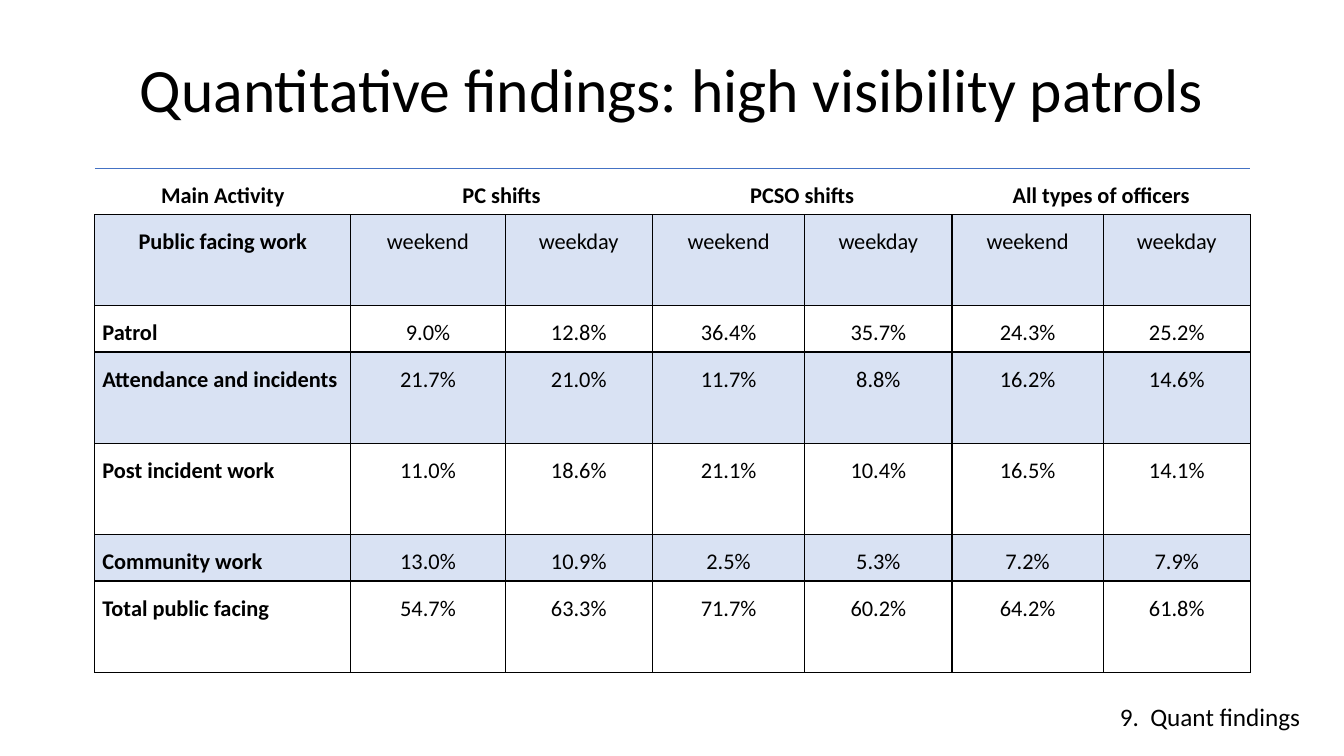
from dataclasses import dataclass
from typing import Any

from lxml import etree
from pptx import Presentation
from pptx import util as u
from pptx.dml import color
from pptx.enum import text
from pptx.oxml import ns

BLACK, BLUE = "000000", "4472C4"
MID, LEFT = text.PP_ALIGN.CENTER, text.PP_ALIGN.LEFT


@dataclass
class Label:
    words: str
    box: tuple[float, float, float, float]
    size: int
    align: Any
    frame: dict[str, Any]
    space: float = 1.0


LABELS = [
    Label("Quantitative findings: high visibility patrols",
          (2.39, 0.84, 29.11, 3.0), 44, MID,
          {"vertical_anchor": text.MSO_ANCHOR.MIDDLE,
           "margin_left": u.Cm(0.76), "margin_right": u.Cm(0.76),
           "margin_top": u.Cm(0.51), "margin_bottom": u.Cm(0.51)}, 0.9),
    Label("9.  Quant findings", (27.97, 17.55, 5.51, 1.02), 18, LEFT,
          {"auto_size": text.MSO_AUTO_SIZE.SHAPE_TO_FIT_TEXT}),
]

COLS = [6.45, 3.89, 3.71, 3.84, 3.71, 3.81, 3.71]
ROWS = [1.17, 2.29, 1.17, 2.31, 2.29, 1.17, 2.31]
HEADS = ["Main Activity", "PC shifts", "", "PCSO shifts", "",
         "All types of officers", ""]
DATA = [
    HEADS,
    ["Public facing work"] + ["weekend", "weekday"] * 3,
    ["Patrol", "9.0%", "12.8%", "36.4%", "35.7%", "24.3%", "25.2%"],
    ["Attendance and incidents",
     "21.7%", "21.0%", "11.7%", "8.8%", "16.2%", "14.6%"],
    ["Post incident work",
     "11.0%", "18.6%", "21.1%", "10.4%", "16.5%", "14.1%"],
    ["Community work", "13.0%", "10.9%", "2.5%", "5.3%", "7.2%", "7.9%"],
    ["Total public facing",
     "54.7%", "63.3%", "71.7%", "60.2%", "64.2%", "61.8%"],
]
CELL = {"margin_left": u.Cm(0.19), "margin_right": u.Cm(0.19),
        "margin_top": 0, "margin_bottom": 0,
        "vertical_anchor": text.MSO_ANCHOR.TOP}
HEAD_EDGES = {"L": None, "R": None, "T": BLUE, "B": BLACK}
BODY_EDGES = dict.fromkeys("LRTB", BLACK)


def rgb(code: str) -> color.RGBColor:
    return color.RGBColor.from_string(code)


def apply(item: Any, form: dict[str, Any]) -> None:
    for name, value in form.items():
        setattr(item, name, value)


def write(frame: Any, words: str, size: int, align: Any,
          space: float, bold: bool = False) -> None:
    par = frame.paragraphs[0]
    apply(par, {"alignment": align, "line_spacing": space})
    run = par.add_run()
    run.text = words
    apply(run.font, {"name": "Calibri", "size": u.Pt(size), "bold": bold})
    run.font.color.rgb = rgb(BLACK)


def add_label(slide: Any, label: Label) -> None:
    frame = slide.shapes.add_textbox(*map(u.Cm, label.box)).text_frame
    apply(frame, {"word_wrap": True, **label.frame})
    write(frame, label.words, label.size, label.align, label.space)


def tint(cell: Any, code: str, share: int) -> None:
    cell.fill.solid()
    cell.fill.fore_color.rgb = rgb(code)
    tone = cell._tc.tcPr.find(".//" + ns.qn("a:srgbClr"))
    etree.SubElement(tone, ns.qn("a:alpha"), val=str(share * 1000))


def edge(cell: Any, edges: dict[str, str | None]) -> None:
    props = cell._tc.get_or_add_tcPr()
    for spot, (side, code) in enumerate(edges.items()):
        line = etree.Element(ns.qn("a:ln" + side), w=str(u.Pt(1)))
        if code:
            fill = etree.SubElement(line, ns.qn("a:solidFill"))
            etree.SubElement(fill, ns.qn("a:srgbClr"), val=code)
        else:
            etree.SubElement(line, ns.qn("a:noFill"))
        props.insert(spot, line)


def add_grid(slide: Any) -> None:
    table = slide.shapes.add_table(
        len(ROWS), len(COLS), u.Cm(2.39), u.Cm(4.24),
        u.Cm(sum(COLS)), u.Cm(sum(ROWS))).table
    apply(table, {"first_row": False, "horz_banding": False})
    for col, width in zip(table.columns, COLS):
        col.width = u.Cm(width)
    for row, height in zip(table.rows, ROWS):
        row.height = u.Cm(height)

    # Cells: odd rows are tinted, the first two rows are headings
    for r, line in enumerate(DATA):
        for c, words in enumerate(line):
            cell = table.cell(r, c)
            apply(cell, CELL)
            if r % 2:
                tint(cell, BLUE, 20)
            else:
                cell.fill.background()
            edge(cell, BODY_EDGES if r else HEAD_EDGES)
            if words:
                write(cell.text_frame, words, 16,
                      LEFT if c == 0 and r > 1 else MID,
                      1.5, r == 0 or c == 0)

    # Each shift heading spans its weekend and weekday columns
    for c in range(1, len(COLS), 2):
        table.cell(0, c).merge(table.cell(0, c + 1))


def main() -> None:
    deck = Presentation()
    apply(deck, {"slide_width": u.Cm(33.87), "slide_height": u.Cm(19.05)})
    slide = deck.slides.add_slide(deck.slide_layouts[6])
    # Title, table, section label
    title, foot = LABELS
    add_label(slide, title)
    add_grid(slide)
    add_label(slide, foot)
    deck.save("out.pptx")


if __name__ == "__main__":
    main()
